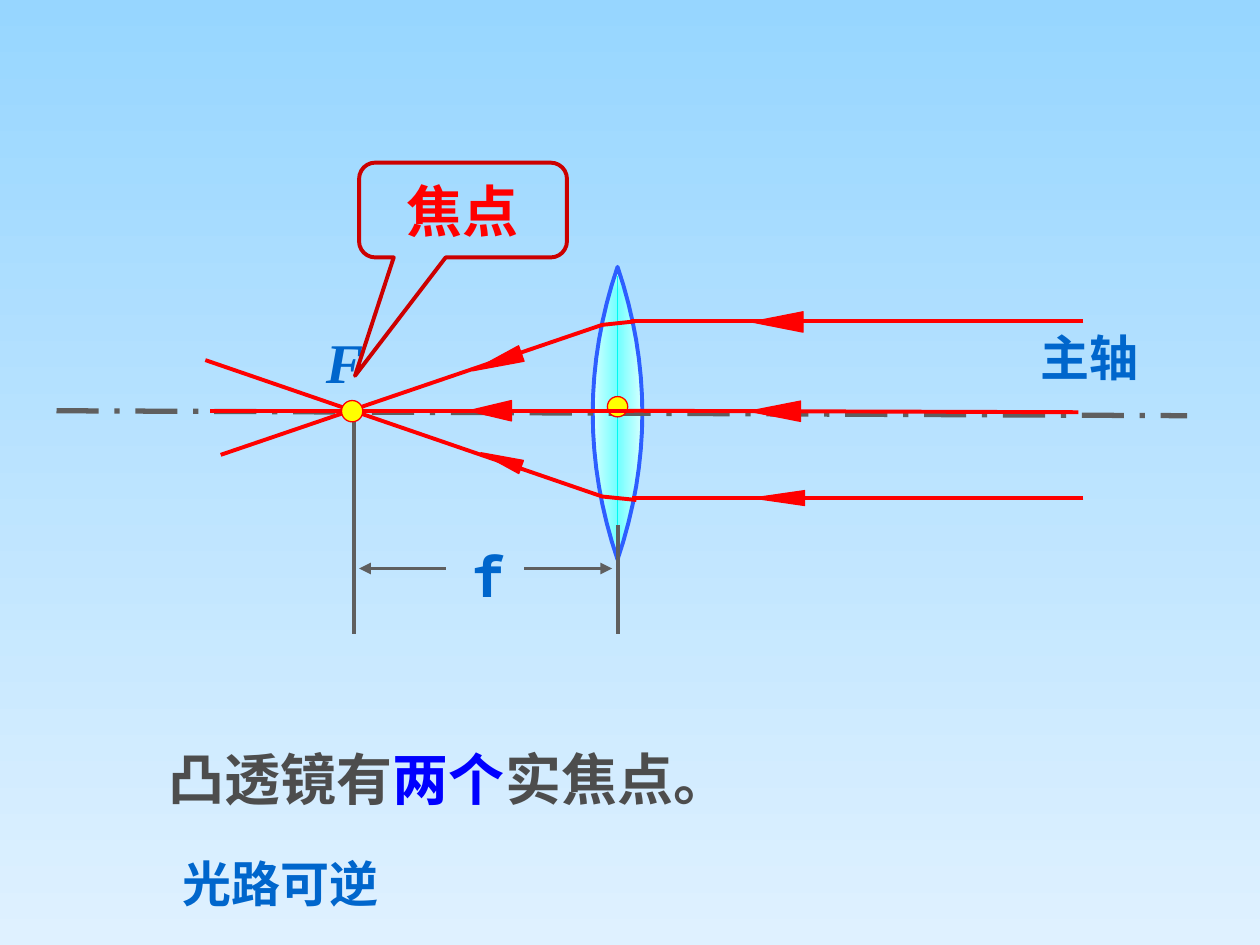
from typing import NamedTuple

from lxml.etree import SubElement
from pptx import Presentation
from pptx.dml.color import RGBColor
from pptx.enum.dml import MSO_LINE as Dash
from pptx.enum.shapes import MSO_CONNECTOR as Conn, MSO_SHAPE as Kind
from pptx.enum.text import MSO_ANCHOR as Anchor, PP_ALIGN as Align
from pptx.oxml.ns import qn
from pptx.util import Cm, Pt

RED, GREY, BLUE, YELLOW = "FF0000", "5F5F5F", "0066CC", "FFFF00"
SANS, MONO, SERIF = "Noto Sans CJK SC", "Noto Sans Mono", "Times New Roman"
Point = tuple[float, float]


class Ray(NamedTuple):
    points: list[Point]
    tip: Point  # centre of the arrowhead
    width: float
    length: float
    angle: float


class Label(NamedTuple):
    runs: list[tuple[str, str]]  # text and colour
    box: tuple[float, float, float, float]
    size: int
    font: str
    wrap: bool = True
    italic: bool = False


def color(code: str) -> RGBColor:
    return RGBColor.from_string(code)


def paint(shape, fill: str | None, line: str, width: float) -> None:
    shape.shadow.inherit = False
    if fill:
        shape.fill.solid()
        shape.fill.fore_color.rgb = color(fill)
    else:
        shape.fill.background()
    shape.line.color.rgb = color(line)
    shape.line.width = Pt(width)


def shade(fill, first: str, last: str) -> None:
    fill.gradient()
    for stop, code, place in zip(fill.gradient_stops, (first, last), (0, 1)):
        stop.color.rgb = color(code)
        stop.position = place


def draw_line(start: Point, end: Point, code: str, width: float, head: bool = False):
    line = slide.shapes.add_connector(Conn.STRAIGHT, *map(Cm, start + end))
    line.line.color.rgb = color(code)
    line.line.width = Pt(width)
    if head:
        SubElement(line.line._get_or_add_ln(), qn("a:tailEnd"), type="triangle")
    SubElement(line._element.spPr, qn("a:effectLst"))
    return line


def draw_path(points: list[Point], close: bool = False):
    spots = [(Cm(x), Cm(y)) for x, y in points]
    path = slide.shapes.build_freeform(*spots[0])
    path.add_line_segments(spots[1:], close=close)
    return path.convert_to_shape()


def draw_mark(kind: Kind, mid: Point, width: float, height: float, fill: str):
    x, y = mid
    mark = slide.shapes.add_shape(
        kind, Cm(x - width / 2), Cm(y - height / 2), Cm(width), Cm(height))
    paint(mark, fill, RED, 0.75)
    return mark


def draw_ray(ray: Ray) -> None:
    if len(ray.points) == 2:
        draw_line(*ray.points, RED, 2.25)
    else:
        paint(draw_path(ray.points), None, RED, 2.25)
    head = draw_mark(Kind.ISOSCELES_TRIANGLE, ray.tip, ray.width, ray.length, RED)
    head.rotation = ray.angle


def set_font(font, size: int, name: str, italic: bool = False) -> None:
    font.size, font.name = Pt(size), name
    font.bold, font.italic = True, italic
    SubElement(font._element, qn("a:ea"), typeface=SANS)


def draw_label(label: Label) -> None:
    frame = slide.shapes.add_textbox(*map(Cm, label.box)).text_frame
    frame.word_wrap = label.wrap
    para = frame.paragraphs[0]
    set_font(para.font, label.size, label.font, label.italic)
    for text, code in label.runs:
        run = para.add_run()
        run.text = text
        run.font.color.rgb = color(code)


deck = Presentation()
deck.slide_width, deck.slide_height = Cm(25.4), Cm(19.05)
slide = deck.slides.add_slide(deck.slide_layouts[6])
back = slide.background.fill
shade(back, "97D6FF", "DFF1FF")
back.gradient_angle = 270

# Lens: two parabolic sides
MID, AXIS, HALF, TALL, STEPS = 12.45, 8.33, 0.5, 2.95, 16
ticks = [2 * i / STEPS - 1 for i in range(STEPS + 1)]
left = [(MID - HALF * (1 - t * t), AXIS + TALL * t) for t in ticks]
right = [(2 * MID - x, y) for x, y in left[-2:0:-1]]
lens = draw_path(left + right, close=True)
paint(lens, None, "2D5FFF", 2.25)
shade(lens.fill, "71FFFF", "D5FFFF")
grad = lens._element.spPr.find(qn("a:gradFill"))
grad.remove(grad.find(qn("a:lin")))
glow = SubElement(grad, qn("a:path"), path="shape")
SubElement(glow, qn("a:fillToRect"), l="50000", t="50000", r="50000", b="50000")
draw_line((MID, 5.56), (MID, 11.25), "00F8F2", 1)

# Main axis and optical centre
axis = draw_line((1.14, 8.28), (23.93, 8.38), GREY, 3)
axis.line.dash_style = Dash.LONG_DASH_DOT
draw_mark(Kind.OVAL, (MID, 8.2), 0.41, 0.41, YELLOW)

# Focal length
FOCUS = 7.14
draw_line((MID, 10.59), (MID, 12.78), GREY, 2.25)
draw_line((FOCUS, 8.38), (FOCUS, 12.78), GREY, 2.25)
draw_line((8.99, 11.46), (7.24, 11.46), GREY, 2.25, head=True)
draw_line((10.57, 11.46), (12.34, 11.46), GREY, 2.25, head=True)

# Labels
for label in (
    Label([("F", BLUE)], (6.32, 6.48, 1.4, 1.6), 32, SERIF, italic=True),
    Label([("主轴", BLUE)], (20.73, 6.48, 3.51, 1.45), 28, SANS),
    Label([("f", BLUE)], (9.25, 10.8, 0.86, 1.6), 32, MONO, wrap=False),
    Label([("凸透镜有", "4D4D4D"), ("两个", "0000FF"), ("实焦点。", "4D4D4D")],
          (3.15, 14.88, 13.69, 1.6), 32, SANS),
    Label([("光路可逆", BLUE)], (3.43, 17.09, 4.47, 1.45), 28, SANS, wrap=False),
):
    draw_label(label)

# Light rays, before and after the lens
for ray in (
    Ray([(21.84, 6.48), (12.73, 6.48)], (15.67, 6.49), 0.41, 1.04, 270),
    Ray([(21.84, 10.03), (12.75, 10.03)], (15.7, 10.04), 0.3, 1.04, 270),
    Ray([(21.74, 8.31), (12.67, 8.28)], (15.62, 8.29), 0.41, 1.04, 270),
    Ray([(12.83, 10.08), (12.14, 10.01), (4.14, 7.26)],
        (10.1, 9.27), 0.28, 0.86, 289.5),
    Ray([(12.8, 6.48), (12.14, 6.55), (4.45, 9.17)],
        (10.02, 7.3), 0.33, 1.04, 250.5),
    Ray([(12.78, 8.28), (4.24, 8.28)], (9.88, 8.28), 0.41, 0.86, 270),
):
    draw_ray(ray)

# Focus and its callout
draw_mark(Kind.OVAL, (7.1, 8.29), 0.43, 0.43, YELLOW)
note = slide.shapes.add_shape(
    Kind.ROUNDED_RECTANGULAR_CALLOUT, Cm(7.24), Cm(3.28), Cm(4.19), Cm(1.91))
for i, value in enumerate((-0.52, 1.75, 0.17)):
    note.adjustments[i] = value
paint(note, None, "CC0000", 2.25)
frame = note.text_frame
frame.margin_left = frame.margin_right = 0
frame.word_wrap = False
frame.vertical_anchor = Anchor.MIDDLE
para = frame.paragraphs[0]
para.alignment = Align.CENTER
set_font(para.font, 32, SERIF)
para.font.color.rgb = color(RED)
para.add_run().text = "焦点"

deck.save("out.pptx")
